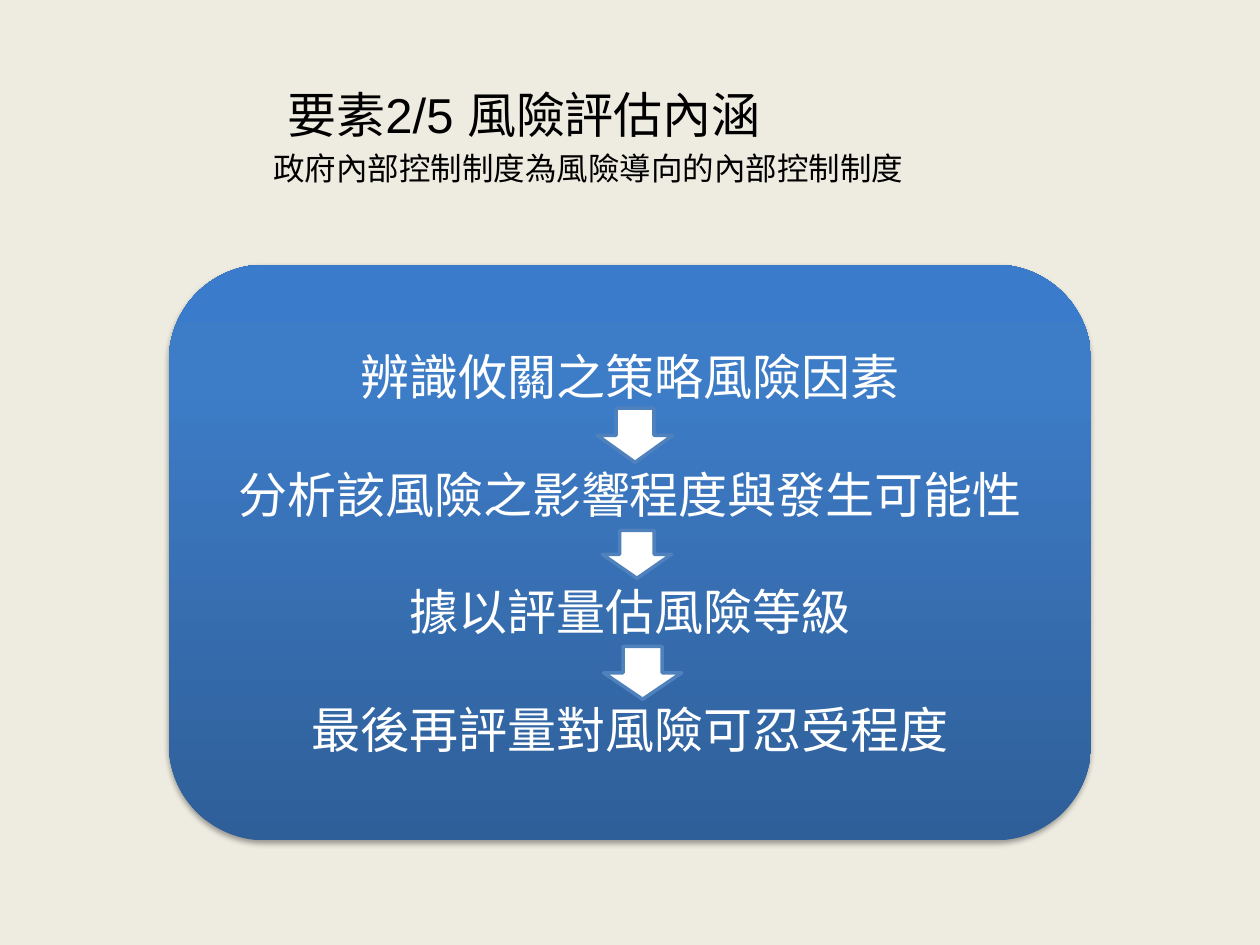
from copy import deepcopy

from lxml import etree
from pptx import Presentation
from pptx.dml.color import RGBColor
from pptx.enum.shapes import MSO_SHAPE as SHAPE
from pptx.enum.text import MSO_ANCHOR as ANCHOR, MSO_AUTO_SIZE as AUTO, PP_ALIGN as ALIGN
from pptx.oxml.ns import qn
from pptx.util import Inches, Pt

BLACK = RGBColor(0x00, 0x00, 0x00)
WHITE = RGBColor(0xFF, 0xFF, 0xFF)
CREAM = RGBColor(0xEE, 0xEC, 0xE1)
ARROW_LINE = RGBColor(0x4F, 0x81, 0xBD)
PANEL_STOPS = [
    (0, RGBColor(0x2F, 0x5F, 0x99)),
    (0.8, RGBColor(0x3D, 0x7C, 0xC7)),
    (1, RGBColor(0x3A, 0x7C, 0xCB)),
]

STEPS = [
    "辨識攸關之策略風險因素",
    "分析該風險之影響程度與發生可能性",
    "據以評量估風險等級",
    "最後再評量對風險可忍受程度",
]
ARROWS = [
    (4.74, 3.24, 0.6, 0.43),
    (4.78, 4.21, 0.55, 0.38),
    (4.79, 5.13, 0.62, 0.42),
]


class SlideBuilder:
    font = "Arial"
    large = Pt(28)
    small = Pt(18)
    step_gap = Pt(33.5)

    def __init__(self, prs):
        self.slide = prs.slides.add_slide(prs.slide_layouts[5])
        fill = self.slide.background.fill
        fill.solid()
        fill.fore_color.rgb = CREAM

    def add_text(self, p, text, size, color, align):
        p.alignment = align
        r = p.add_run()
        r.text = text
        r.font.name = self.font
        r.font.size = size
        r.font.color.rgb = color

    def title(self, box, text):
        sp = self.slide.shapes.title
        sp.left, sp.top, sp.width, sp.height = map(Inches, box)
        tf = sp.text_frame
        tf.vertical_anchor = ANCHOR.MIDDLE
        self.add_text(tf.paragraphs[0], text, self.large, BLACK, ALIGN.CENTER)

    def subtitle(self, box, text):
        tf = self.slide.shapes.add_textbox(*map(Inches, box)).text_frame
        tf.word_wrap = True
        tf.auto_size = AUTO.SHAPE_TO_FIT_TEXT
        self.add_text(tf.paragraphs[0], text, self.small, BLACK, ALIGN.LEFT)

    def shape(self, kind, box):
        sp = self.slide.shapes.add_shape(kind, *map(Inches, box))
        sp.shadow.inherit = False
        return sp

    def panel(self, box, lines):
        sp = self.shape(SHAPE.ROUNDED_RECTANGLE, box)
        sp.line.fill.background()
        self.gradient(sp, PANEL_STOPS)
        self.soft_shadow(sp)
        tf = sp.text_frame
        tf.word_wrap = True
        tf.vertical_anchor = ANCHOR.MIDDLE
        for i, line in enumerate(lines):
            p = tf.add_paragraph() if i else tf.paragraphs[0]
            if i:
                p.space_before = self.step_gap
            self.add_text(p, line, self.large, WHITE, ALIGN.CENTER)

    def gradient(self, sp, stops):
        sp.fill.gradient()
        sp.fill.gradient_angle = 90
        # The default gradient has two stops; add the third
        gs_list = sp._element.spPr.find(qn("a:gradFill")).find(qn("a:gsLst"))
        gs_list.append(deepcopy(gs_list[-1]))
        for stop, (position, color) in zip(sp.fill.gradient_stops, stops):
            stop.position = position
            stop.color.rgb = color

    def soft_shadow(self, sp):
        effects = sp._element.spPr.find(qn("a:effectLst"))
        shadow = etree.SubElement(
            effects, qn("a:outerShdw"), blurRad=str(int(Pt(3.1))),
            dist=str(int(Pt(1.8))), dir="5400000", rotWithShape="0")
        color = etree.SubElement(shadow, qn("a:srgbClr"), val=str(BLACK))
        etree.SubElement(color, qn("a:alpha"), val="35000")

    def arrow(self, box):
        sp = self.shape(SHAPE.DOWN_ARROW, box)
        sp.fill.solid()
        sp.fill.fore_color.rgb = WHITE
        sp.line.color.rgb = ARROW_LINE
        sp.line.width = Pt(2)


def main():
    prs = Presentation()
    prs.slide_width, prs.slide_height = Inches(10), Inches(7.5)
    s = SlideBuilder(prs)

    # Heading
    s.title((-0.34, 0.28, 9, 1.25), "要素2/5 風險評估內涵")

    # Risk assessment steps and the arrows between them
    s.panel((1.34, 2.1, 7.32, 4.57), STEPS)
    for box in ARROWS:
        s.arrow(box)

    # Line under the heading
    s.subtitle((2.07, 1.13, 5.74, 0.4), "政府內部控制制度為風險導向的內部控制制度")

    prs.save("out.pptx")


if __name__ == "__main__":
    main()
